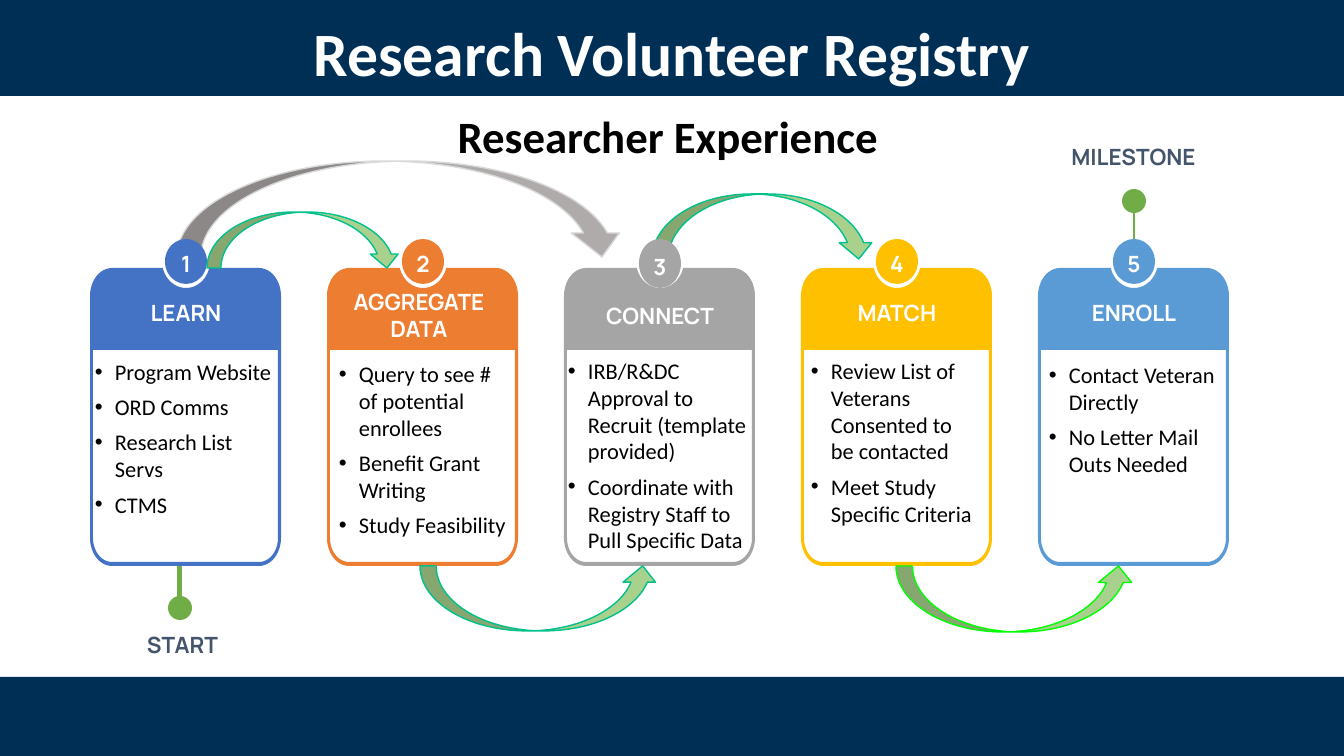
from math import cos, pi, sin

from lxml.etree import SubElement
from pptx import Presentation
from pptx.dml.color import RGBColor
from pptx.enum.shapes import MSO_CONNECTOR, MSO_SHAPE
from pptx.enum.text import MSO_ANCHOR, PP_ALIGN
from pptx.oxml.ns import qn
from pptx.util import Emu, Pt

NAVY = RGBColor(0x00, 0x2F, 0x56)
WHITE = RGBColor(0xFF, 0xFF, 0xFF)
BLACK = RGBColor(0x00, 0x00, 0x00)
SLATE = RGBColor(0x44, 0x54, 0x6A)
MARKER_GREEN = RGBColor(0x70, 0xAD, 0x47)
ARROW_GREEN = RGBColor(0xA9, 0xD1, 0x8E)
ARROW_GRAY = RGBColor(0xAF, 0xAB, 0xAB)
TEAL = RGBColor(0x00, 0xC1, 0x8B)
LIGHT_GRAY = RGBColor(0xD9, 0xD9, 0xD9)
LIME = RGBColor(0x00, 0xFF, 0x00)
BLUE = RGBColor(0x44, 0x72, 0xC4)
ORANGE = RGBColor(0xED, 0x7D, 0x31)
GRAY = RGBColor(0xA5, 0xA5, 0xA5)
GOLD = RGBColor(0xFF, 0xC0, 0x00)
SKY = RGBColor(0x5B, 0x9B, 0xD5)

# Offsets are from the card's left edge; bottoms and tops are on the slide.
STEPS = [
    dict(title="LEARN", color=BLUE, title_offset=12, title_bottom=328,
         badge_height=45, number_bottom=279, list_offset=0, list_top=356, list_width=190,
         items=["Program Website", "ORD Comms", "Research List Servs", "CTMS"]),
    dict(title="AGGREGATE DATA", color=ORANGE, title_offset=8, title_bottom=344,
         badge_height=45, number_bottom=279, list_offset=7, list_top=358, list_width=180,
         items=["Query to see # of potential enrollees", "Benefit Grant Writing",
                "Study Feasibility"]),
    dict(title="CONNECT", color=GRAY, title_offset=12, title_bottom=331,
         badge_height=49, number_bottom=282, list_offset=-1, list_top=355, list_width=192,
         items=["IRB/R&DC Approval to Recruit (template provided)",
                "Coordinate with Registry Staff to Pull Specific Data"]),
    dict(title="MATCH", color=GOLD, title_offset=12, title_bottom=328,
         badge_height=45, number_bottom=279, list_offset=5, list_top=355, list_width=175,
         items=["Review List of Veterans Consented to be contacted",
                "Meet Study Specific Criteria"]),
    dict(title="ENROLL", color=SKY, title_offset=12, title_bottom=328,
         badge_height=45, number_bottom=279, list_offset=6, list_top=359, list_width=184,
         items=["Contact Veteran Directly", "No Letter Mail Outs Needed"]),
]
BANDS = [(0, 0, 1344, 96), (0, 677, 1344, 79)]
# box, fill, line, pointing up from below
BACK_ARROWS = [
    ((652, 194, 223, 65), ARROW_GREEN, TEAL, False),
    ((177, 161, 449, 96), ARROW_GRAY, LIGHT_GRAY, False),
]
FRONT_ARROWS = [
    ((207, 212, 194, 56), ARROW_GREEN, TEAL, False),
    ((420, 566, 239, 65), ARROW_GREEN, TEAL, True),
    ((896, 566, 239, 66), ARROW_GREEN, LIME, True),
]
# label, label box, dot centre, y where the stem meets the card, stem width in points
MARKERS = [
    ("START", (136, 630, 93, 30), (180, 608), 566, 3.6),
    ("MILESTONE", (1058, 143, 151, 28), (1134, 201), 268, 1.5),
]
DOT = 24

PX = 9525 * 96 / 100.8
CARD_LEFT, CARD_TOP, CARD_PITCH = 90, 268, 237
CARD_WIDTH, CARD_BOTTOM = 191, 566
CARD_CENTER = 96
HOLE_TOP, BORDER = 350, 3
BADGE_TOP, BADGE_WIDTH = 239, 42

presentation = Presentation()
presentation.slide_width, presentation.slide_height = Emu(12192000), Emu(6858000)
slide = presentation.slides.add_slide(presentation.slide_layouts[6])


def px(*lengths):
    return [Emu(round(length * PX)) for length in lengths]


def paint(shape, fill, line=None):
    shape.shadow.inherit = False
    shape.fill.solid()
    shape.fill.fore_color.rgb = fill
    if line is None:
        shape.line.fill.background()
    else:
        shape.line.color.rgb = line
        shape.line.width = Pt(1)


def add_preset(kind, box, fill, line=None):
    shape = slide.shapes.add_shape(kind, *px(*box))
    paint(shape, fill, line)
    return shape


def add_text(box, lines, size, font, color, bold=True, anchor=MSO_ANCHOR.TOP, bullets=False):
    frame = slide.shapes.add_textbox(*px(*box)).text_frame
    frame.word_wrap = True
    frame.vertical_anchor = anchor
    frame.margin_left, frame.margin_top = frame.margin_right, frame.margin_bottom = px(5, 2)
    for index, line in enumerate(lines):
        paragraph = frame.add_paragraph() if index else frame.paragraphs[0]
        if bullets:
            properties = paragraph._p.get_or_add_pPr()
            indent = px(20)[0]
            properties.set("marL", str(indent))
            properties.set("indent", str(-indent))
            SubElement(properties, qn("a:buFont"), typeface="Arial")
            SubElement(properties, qn("a:buChar"), char="•")
            paragraph.space_after = Pt(6)
        else:
            paragraph.alignment = PP_ALIGN.CENTER
        run = paragraph.add_run()
        run.text = line
        run.font.size, run.font.name, run.font.bold = Pt(size), font, bold
        run.font.color.rgb = color


def add_arrow(box, fill, line, from_below):
    arrow = add_preset(MSO_SHAPE.CURVED_DOWN_ARROW, box, fill, line)
    if from_below:
        arrow.element.spPr.get_or_add_xfrm().set("flipV", "1")


def arc(center_x, center_y, radius_x, radius_y, start, end, steps=12):
    """Points on an ellipse; angles in degrees, clockwise from the right."""
    angles = [(start + (end - start) * i / steps) * pi / 180 for i in range(steps + 1)]
    return [(center_x + radius_x * cos(a), center_y + radius_y * sin(a)) for a in angles]


def add_card(left, color):
    """Rounded frame with a notch around the badge and an open body."""
    right = left + CARD_WIDTH
    outline = (
        arc(left + 22, CARD_TOP + 28, 22, 28, 180, 270)
        + arc(left + CARD_CENTER, 261, 24, 27, 165, 15, 24)
        + arc(right - 22, CARD_TOP + 28, 22, 28, 270, 360)
        + arc(right - 22, CARD_BOTTOM - 28, 22, 28, 0, 90)
        + arc(left + 22, CARD_BOTTOM - 28, 22, 28, 90, 180)
    )
    hole = (
        [(left + BORDER, HOLE_TOP), (right - BORDER, HOLE_TOP)]
        + arc(right - 22, CARD_BOTTOM - 28, 19, 24, 0, 90)
        + arc(left + 22, CARD_BOTTOM - 28, 19, 24, 90, 180)
    )
    builder = slide.shapes.build_freeform(*px(*outline[0]))
    builder.add_line_segments([px(*point) for point in outline[1:]])
    builder.move_to(*px(*hole[0]))
    builder.add_line_segments([px(*point) for point in hole[1:]])
    paint(builder.convert_to_shape(), color)


def add_marker(label, label_box, center, card_y, stem_width):
    x, y = center
    stem = slide.shapes.add_connector(MSO_CONNECTOR.STRAIGHT, *px(x, y, x, card_y))
    stem.line.color.rgb = MARKER_GREEN
    stem.line.width = Pt(stem_width)
    SubElement(stem.element.spPr, qn("a:effectLst"))
    add_preset(MSO_SHAPE.OVAL, (x - DOT / 2, y - DOT / 2, DOT, DOT), MARKER_GREEN)
    add_text(label_box, [label], 16, "Manrope", SLATE, anchor=MSO_ANCHOR.MIDDLE)


def add_step(number, step):
    left = CARD_LEFT + (number - 1) * CARD_PITCH
    center = left + CARD_CENTER
    add_card(left, step["color"])
    add_preset(MSO_SHAPE.OVAL, (center - BADGE_WIDTH / 2, BADGE_TOP, BADGE_WIDTH,
                                step["badge_height"]), step["color"])
    add_text((center - 13, step["number_bottom"] - 35, 26, 35), [str(number)],
             16, "Manrope", WHITE, anchor=MSO_ANCHOR.BOTTOM)
    add_text((left + step["title_offset"], step["title_bottom"] - 35, 168, 35),
             [step["title"]], 16, "Manrope", WHITE, anchor=MSO_ANCHOR.BOTTOM)
    add_text((left + step["list_offset"], step["list_top"], step["list_width"], 180),
             step["items"], 16, "Calibri", BLACK, bold=False, bullets=True)


for band in BANDS:
    add_preset(MSO_SHAPE.RECTANGLE, band, NAVY)
for arrow_details in BACK_ARROWS:
    add_arrow(*arrow_details)
add_text((0, 13, 1344, 71), ["Research Volunteer Registry"], 44, "Calibri", WHITE)
add_text((381, 107, 574, 29), ["Researcher Experience"], 32, "Calibri", BLACK)
for marker in MARKERS:
    add_marker(*marker)
for step_number, step_details in enumerate(STEPS, 1):
    add_step(step_number, step_details)
for arrow_details in FRONT_ARROWS:
    add_arrow(*arrow_details)

presentation.save("out.pptx")
